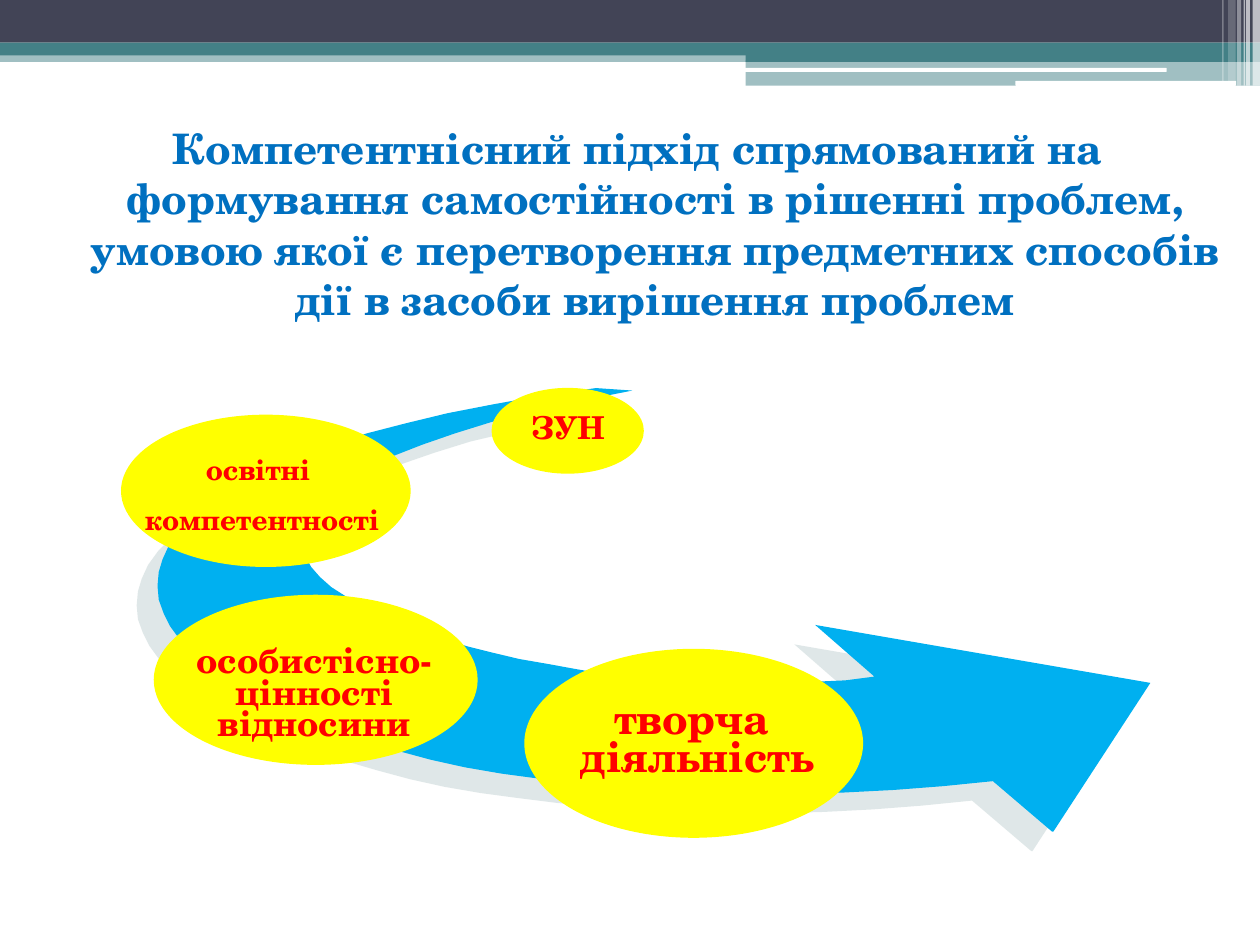
from pptx import Presentation
from pptx.dml.color import RGBColor as Rgb
from pptx.enum.shapes import MSO_SHAPE as Kind
from pptx.enum.text import MSO_AUTO_SIZE as Fit, PP_ALIGN as Align
from pptx.oxml.xmlchemy import OxmlElement as Node
from pptx.util import Cm, Pt

HUES = {
    "dark": "424456", "teal": "438086", "white": "FFFFFF", "title": "0070C0",
    "arrow": "00B0F0", "oval": "FFFF00", "text": "FF0000", "shade": "C1D1D3",
}
FACE = "TeX Gyre Schola"

# Header bars: kind, left, top, width, height, hue, opacity
BARS = [
    (Kind.RECTANGLE, 0, 1.02, 25.4, 0.23, "teal", 50),
    (Kind.RECTANGLE, 0, 0, 25.4, 0.86, "dark", 100),
    (Kind.RECTANGLE, 0, 0.86, 25.4, 0.26, "teal", 100),
    (Kind.RECTANGLE, 15.03, 0.99, 10.37, 0.26, "teal", 100),
    (Kind.RECTANGLE, 15.03, 1.22, 10.37, 0.51, "teal", 50),
    (Kind.ROUNDED_RECTANGLE, 15.01, 1.37, 8.51, 0.08, "white", 100),
    (Kind.ROUNDED_RECTANGLE, 20.47, 1.63, 4.45, 0.1, "white", 100),
]

# Thin stripes at the right edge: left, width, height, opacity
STRIPES = [
    (25.25, 0.15, 1.73, 65), (25.12, 0.08, 1.73, 65), (25.07, 0.03, 1.73, 60),
    (24.94, 0.08, 1.73, 40), (24.76, 0.15, 1.63, 20), (24.64, 0.03, 1.63, 30),
]

TITLE = ("Компетентнісний підхід спрямований на формування самостійності "
         "в рішенні проблем, умовою якої є перетворення предметних способів "
         "дії в засоби вирішення проблем")

# Curved arrow outline, in units of UNIT
UNIT = Cm(0.0254)
CURVE = [
    (473, 308), (430, 314), (391, 321), (355, 328), (322, 336), (291, 344),
    (263, 353), (238, 362), (216, 371), (196, 381), (179, 391), (164, 401),
    (152, 412), (142, 422), (134, 433), (129, 444), (126, 454), (125, 465),
    (126, 476), (130, 487), (135, 497), (143, 508), (152, 518), (164, 528),
    (176, 538), (192, 547), (208, 557), (227, 565), (246, 574), (268, 582),
    (292, 589), (316, 596), (342, 603), (369, 609), (398, 614), (428, 618),
    (460, 622), (492, 625), (526, 628), (560, 629), (596, 630), (633, 630),
    (670, 629), (709, 627), (748, 624), (788, 620), (835, 660), (836, 660),
    (913, 542), (647, 496), (694, 537), (671, 540), (648, 541), (624, 542),
    (600, 543), (576, 542), (552, 541), (528, 539), (504, 537), (480, 535),
    (457, 531), (435, 527), (412, 523), (391, 518), (371, 513), (351, 507),
    (333, 501), (316, 495), (300, 488), (286, 481), (274, 473), (263, 466),
    (254, 458), (247, 450), (242, 441), (240, 433), (240, 424), (241, 416),
    (246, 407), (254, 398), (264, 389), (277, 380), (293, 371), (312, 362),
    (335, 353), (361, 344), (390, 335), (424, 327), (461, 318), (502, 310),
]

# Stages: oval box, text box, top inset, size, line spacing, lines
STAGES = [
    ((10.57, 13.08, 6.83, 3.81), (11.13, 14.07, 5.87, 1.63),
     0.13, 24, 0.75, ["творча ", "діяльність"]),
    ((3.1, 11.99, 6.53, 3.43), (2.21, 12.5, 8.26, 2.39),
     0.57, 20, 0.75, ["особистісно-цінності", "відносини"]),
    ((2.44, 8.36, 5.84, 3.07), (2.44, 7.8, 5.69, 2.9),
     0.98, 16, 1.5, ["освітні ", "компетентності"]),
    ((9.91, 7.82, 3.07, 1.73), (10.41, 8.1, 2.08, 1.17),
     0.13, 18, 1.0, ["ЗУН"]),
]


def put(item, vals):
    for key, val in vals.items():
        setattr(item, key, val)


def fade(color, share):
    alpha = Node("a:alpha")
    alpha.set("val", str(share * 1000))
    color.append(alpha)


def paint(shape, hue, share=100):
    shape.shadow.inherit = False
    shape.line.fill.background()
    shape.fill.solid()
    shape.fill.fore_color.rgb = Rgb.from_string(HUES[hue])
    if share < 100:
        fade(shape.fill._xPr.solidFill[0], share)


def add_form(shapes, kind, box, hue, share=100):
    paint(shapes.add_shape(kind, *map(Cm, box)), hue, share)


def add_text(shapes, box, lines, font, para, frame):
    text = shapes.add_textbox(*map(Cm, box)).text_frame
    put(text, {"word_wrap": True, **frame})
    for num, line in enumerate(lines):
        par = text.add_paragraph() if num else text.paragraphs[0]
        put(par, {"alignment": Align.CENTER, **para})
        run = par.add_run()
        run.text = line
        put(run.font, {"name": FACE, "bold": True, "size": Pt(font["size"])})
        run.font.color.rgb = Rgb.from_string(HUES[font["hue"]])
    return text


def add_curve(shapes):
    form = shapes.build_freeform(*CURVE[0], scale=UNIT)
    form.add_line_segments(CURVE[1:], close=True)
    curve = form.convert_to_shape()
    paint(curve, "arrow")
    # Hard shadow to the lower left
    drop = Node("a:outerShdw")
    for key, val in {"blurRad": 0, "dist": Pt(16.3), "dir": 137 * 60000,
                     "algn": "ctr", "rotWithShape": 0}.items():
        drop.set(key, str(int(val) if key != "algn" else val))
    color = Node("a:srgbClr")
    color.set("val", HUES["shade"])
    fade(color, 50)
    drop.append(color)
    curve._element.spPr.find("{*}effectLst").append(drop)


def main():
    deck = Presentation()
    put(deck, {"slide_width": Cm(25.4), "slide_height": Cm(19.05)})
    slide = deck.slides.add_slide(deck.slide_layouts[6])

    # Header
    for kind, *box, hue, share in BARS:
        add_form(slide.shapes, kind, box, hue, share)
    for left, width, height, share in STRIPES:
        add_form(slide.shapes, Kind.RECTANGLE, (left, 0, width, height),
                 "white", share)

    # Title with a hanging indent
    text = add_text(slide.shapes, (0, 2.34, 25.4, 4.45), [TITLE],
                    {"size": 24, "hue": "title"}, {"space_before": Pt(3)}, {})
    props = text.paragraphs[0]._p.get_or_add_pPr()
    props.set("marL", str(Cm(1.02)))
    props.set("indent", str(Cm(-0.71)))

    # Arrow with its stages
    group = slide.shapes.add_group_shape().shapes
    add_curve(group)
    for oval, box, inset, size, gap, lines in STAGES:
        add_form(group, Kind.OVAL, oval, "oval")
        add_text(group, box, lines, {"size": size, "hue": "text"},
                 {"line_spacing": gap},
                 {"margin_top": Cm(inset), "word_wrap": len(lines) > 1,
                  "auto_size": Fit.SHAPE_TO_FIT_TEXT})

    deck.save("out.pptx")


if __name__ == "__main__":
    main()
